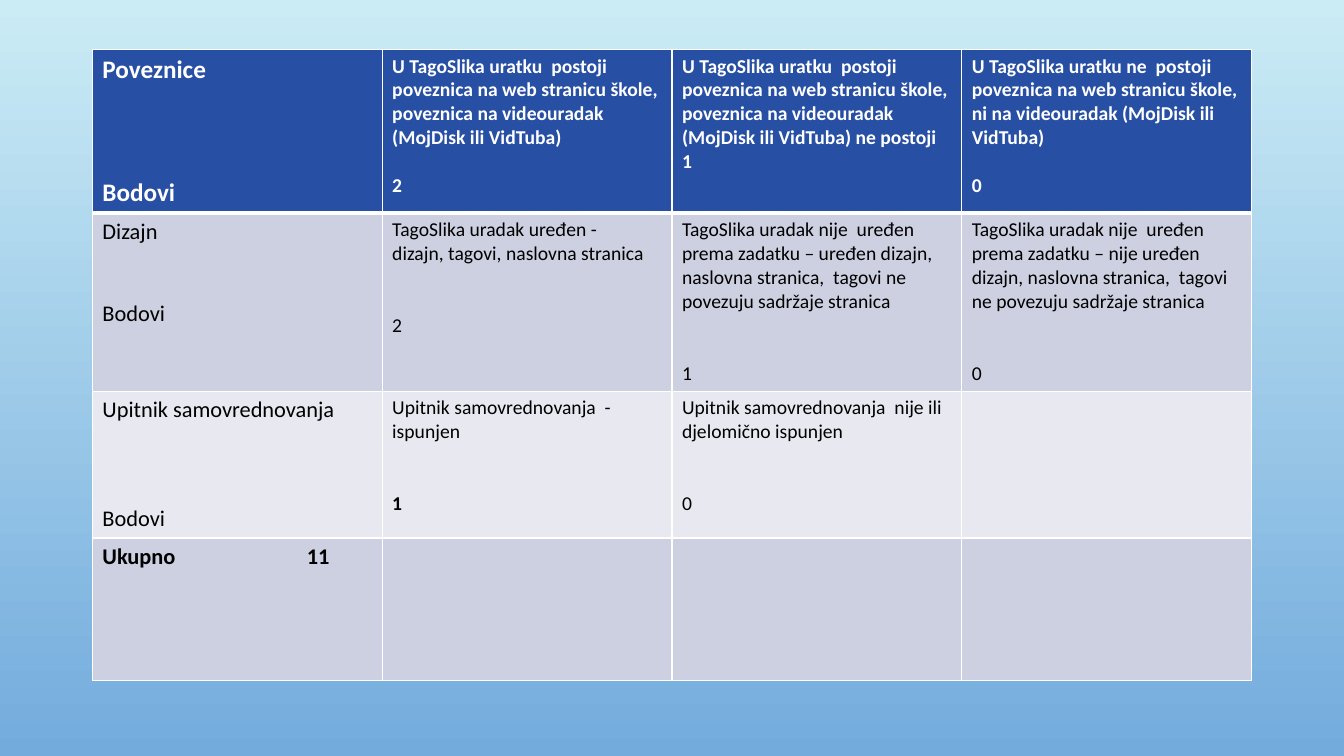
from lxml import etree
from pptx import Presentation
from pptx import util as u
from pptx.dml.color import RGBColor
from pptx.oxml import ns

WHITE = RGBColor(0xFF, 0xFF, 0xFF)
BLACK = RGBColor(0x00, 0x00, 0x00)
HEADER_BLUE = RGBColor(0x27, 0x4F, 0xA4)
BAND_DARK = RGBColor(0xCD, 0xD0, 0xE0)
BAND_LIGHT = RGBColor(0xE8, 0xE9, 0xF0)
SKY_TOP = RGBColor(0xCB, 0xEC, 0xF5)
SKY_BOTTOM = RGBColor(0x73, 0xAB, 0xDD)

LINE_HEIGHT = 1.22  # Calibri line height relative to its size
ROW_HEIGHTS = [117, 127, 105, 102]
ROW_FILLS = [HEADER_BLUE, BAND_DARK, BAND_LIGHT, BAND_DARK]
LABEL_SIZES = [18, 16, 16, 16]

# Each cell: description lines, blank lines before the score, score
RUBRIC = [
    [(["Poveznice"], 3, "Bodovi"),
     (["U TagoSlika uratku  postoji poveznica na web stranicu škole, "
       "poveznica na videouradak (MojDisk ili VidTuba)"], 1, "2"),
     (["U TagoSlika uratku  postoji poveznica na web stranicu škole, "
       "poveznica na videouradak (MojDisk ili VidTuba) ne postoji"], 0, "1"),
     (["U TagoSlika uratku ne  postoji poveznica na web stranicu škole, "
       "ni na videouradak (MojDisk ili VidTuba)"], 1, "0")],
    [(["Dizajn"], 2, "Bodovi"),
     (["TagoSlika uradak uređen -", "dizajn, tagovi, naslovna stranica"], 2, "2"),
     (["TagoSlika uradak nije  uređen prema zadatku – uređen dizajn, "
       "naslovna stranica,  tagovi ne povezuju sadržaje stranica"], 2, "1"),
     (["TagoSlika uradak nije  uređen prema zadatku – nije uređen dizajn, "
       "naslovna stranica,  tagovi ne povezuju sadržaje stranica"], 2, "0")],
    [(["Upitnik samovrednovanja"], 3, "Bodovi"),
     (["Upitnik samovrednovanja  - ispunjen"], 2, "1"),
     (["Upitnik samovrednovanja  nije ili djelomično ispunjen"], 2, "0")],
    [(["Ukupno\t11"], 0, None)],
]
BOLD_SCORE = (2, 1)


def write(paragraph, content, size, color=BLACK, bold=False, before=0, tab=None):
    """Put formatted text into a paragraph."""
    if before:
        paragraph.space_before = u.Pt(before)
    if tab:
        properties = paragraph._p.get_or_add_pPr()
        tabs = etree.SubElement(properties, ns.qn("a:tabLst"))
        etree.SubElement(tabs, ns.qn("a:tab"), pos=str(u.Pt(tab)), algn="l")
    run = paragraph.add_run()
    run.text = content
    run.font.name = "Calibri"
    run.font.size = u.Pt(size)
    run.font.bold = bold
    run.font.color.rgb = color


class RubricSlide:
    def __init__(self, presentation):
        self.slide = presentation.slides.add_slide(presentation.slide_layouts[6])

    def background(self, top, bottom):
        fill = self.slide.background.fill
        fill.gradient()
        fill.gradient_angle = 270
        for stop, color in zip(fill.gradient_stops, (top, bottom)):
            stop.color.rgb = color

    def borders(self, cell, bottom):
        properties = cell._tc.get_or_add_tcPr()
        widths = {"lnL": 1, "lnR": 1, "lnT": 1, "lnB": bottom}
        for position, (side, width) in enumerate(widths.items()):
            line = etree.Element(ns.qn("a:" + side), w=str(u.Pt(width)))
            fill = etree.SubElement(line, ns.qn("a:solidFill"))
            etree.SubElement(fill, ns.qn("a:srgbClr"), val=str(WHITE))
            properties.insert(position, line)

    def cell_text(self, cell, entry, size, color, bold, bold_score):
        lines, gap, score = entry
        frame = cell.text_frame
        for index, line in enumerate(lines):
            paragraph = frame.add_paragraph() if index else frame.paragraphs[0]
            write(paragraph, line, size, color, bold,
                  tab=146 if "\t" in line else None)
        if score:
            write(frame.add_paragraph(), score, size, color, bold or bold_score,
                  before=round(gap * size * LINE_HEIGHT, 1))

    def table(self, left, top, width, rows, columns):
        frame = self.slide.shapes.add_table(
            rows, columns, u.Pt(left), u.Pt(top), u.Pt(width), u.Pt(sum(ROW_HEIGHTS)))
        table = frame.table
        for column in table.columns:
            column.width = u.Pt(width / columns)
        for row, height in enumerate(ROW_HEIGHTS):
            table.rows[row].height = u.Pt(height)
            header, total = row == 0, row == rows - 1
            for column in range(columns):
                cell = table.cell(row, column)
                cell.fill.solid()
                cell.fill.fore_color.rgb = ROW_FILLS[row]
                self.borders(cell, 3 if header else 1)
                if column < len(RUBRIC[row]):
                    self.cell_text(
                        cell, RUBRIC[row][column],
                        size=14 if column else LABEL_SIZES[row],
                        color=WHITE if header else BLACK,
                        bold=header or total,
                        bold_score=(row, column) == BOLD_SCORE)


def main():
    presentation = Presentation()
    presentation.slide_width, presentation.slide_height = u.Pt(960), u.Pt(540)
    rubric = RubricSlide(presentation)
    # Background
    rubric.background(SKY_TOP, SKY_BOTTOM)
    # Scoring table
    rubric.table(66, 35.28, 828, rows=4, columns=4)
    presentation.save("out.pptx")


if __name__ == "__main__":
    main()
